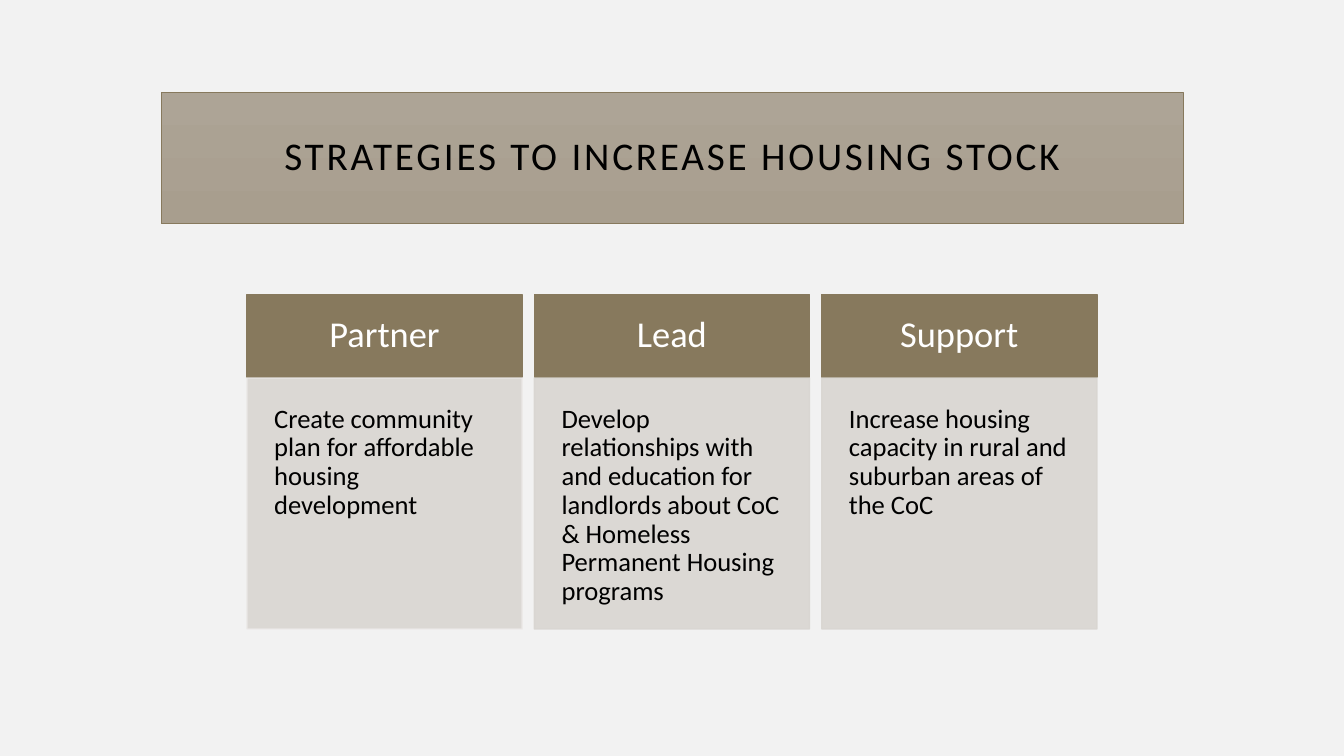
import dataclasses

import pptx
import pptx.dml.color
import pptx.enum.shapes
import pptx.enum.text
import pptx.oxml.ns
import pptx.util
from lxml import etree


@dataclasses.dataclass(frozen=True)
class Theme:
    font: str = "Calibri"
    background: str = "F2F2F2"
    banner_top: str = "ADA496"
    banner_bottom: str = "A89E8E"
    accent: str = "87795D"
    panel: str = "D9D6D1"
    panel_pale: str = "ECEAE8"
    ink: str = "000000"
    white: str = "FFFFFF"
    title_size: int = 28
    heading_size: int = 26
    body_size: int = 19
    line_spacing: float = 0.9
    panel_opacity: int = 90


# Strategy grid, in inches
GRID_LEFT, COLUMN_WIDTH, COLUMN_PITCH = 2.45, 2.73, 2.85
HEADING_ROW = (2.92, 0.82)
DETAIL_ROW = (3.75, 2.49)


def rgb(value):
    return pptx.dml.color.RGBColor.from_string(value)


class StrategySlide:
    def __init__(self, deck, theme):
        self.theme = theme
        self.slide = deck.slides.add_slide(deck.slide_layouts[5])
        backdrop = self.slide.background.fill
        backdrop.solid()
        backdrop.fore_color.rgb = rgb(theme.background)

    def add_words(self, shape, words, size, color, inset, align, anchor):
        frame = shape.text_frame
        frame.word_wrap = True
        frame.auto_size = pptx.enum.text.MSO_AUTO_SIZE.NONE
        frame.vertical_anchor = anchor
        frame.margin_left = frame.margin_right = pptx.util.Inches(inset)
        frame.margin_top = frame.margin_bottom = pptx.util.Inches(inset)
        paragraph = frame.paragraphs[0]
        paragraph.alignment = align
        paragraph.line_spacing = self.theme.line_spacing
        run = paragraph.add_run()
        run.text = words
        run.font.name = self.theme.font
        run.font.size = pptx.util.Pt(size)
        run.font.color.rgb = rgb(color)
        return run

    def title(self, words):
        theme = self.theme
        banner = self.slide.shapes.title
        banner.left, banner.top = pptx.util.Inches(1.6), pptx.util.Inches(0.92)
        banner.width, banner.height = pptx.util.Inches(10.14), pptx.util.Inches(1.3)
        banner.fill.gradient()
        banner.fill.gradient_angle = 270
        for stop, color in zip(banner.fill.gradient_stops,
                               (theme.banner_top, theme.banner_bottom)):
            stop.color.rgb = rgb(color)
        banner.line.color.rgb = rgb(theme.accent)
        banner.line.width = pptx.util.Pt(0.5)
        run = self.add_words(banner, words, theme.title_size, theme.ink, 0.2,
                             pptx.enum.text.PP_ALIGN.CENTER,
                             pptx.enum.text.MSO_ANCHOR.MIDDLE)
        # Letter spacing of 2 pt
        run._r.get_or_add_rPr().set("spc", "200")

    def box(self, column, row, fill, edge, opacity=100):
        top, height = row
        box = self.slide.shapes.add_shape(
            pptx.enum.shapes.MSO_SHAPE.RECTANGLE,
            pptx.util.Inches(GRID_LEFT + column * COLUMN_PITCH),
            pptx.util.Inches(top),
            pptx.util.Inches(COLUMN_WIDTH),
            pptx.util.Inches(height))
        box.shadow.inherit = False
        box.fill.solid()
        box.fill.fore_color.rgb = rgb(fill)
        box.line.color.rgb = rgb(edge)
        box.line.width = pptx.util.Pt(1)
        if opacity < 100:
            for color in box._element.spPr.iter(pptx.oxml.ns.qn("a:srgbClr")):
                alpha = etree.SubElement(color, pptx.oxml.ns.qn("a:alpha"))
                alpha.set("val", str(opacity * 1000))
        return box

    def heading(self, column, words):
        theme = self.theme
        box = self.box(column, HEADING_ROW, theme.accent, theme.accent)
        self.add_words(box, words, theme.heading_size, theme.white, 0.22,
                       pptx.enum.text.PP_ALIGN.CENTER,
                       pptx.enum.text.MSO_ANCHOR.MIDDLE)

    def detail(self, column, words, edge):
        theme = self.theme
        box = self.box(column, DETAIL_ROW, theme.panel, edge, theme.panel_opacity)
        self.add_words(box, words, theme.body_size, theme.ink, 0.27,
                       pptx.enum.text.PP_ALIGN.LEFT,
                       pptx.enum.text.MSO_ANCHOR.TOP)


def main():
    deck = pptx.Presentation()
    deck.slide_width = pptx.util.Inches(13.33)
    deck.slide_height = pptx.util.Inches(7.5)
    theme = Theme()
    page = StrategySlide(deck, theme)

    # Title banner
    page.title("STRATEGIES TO INCREASE HOUSING STOCK")

    # One column per strategy
    strategies = [
        ("Partner", "Create community plan for affordable housing development",
         theme.panel_pale),
        ("Lead", "Develop relationships with and education for landlords about "
         "CoC & Homeless Permanent Housing programs", theme.panel),
        ("Support", "Increase housing capacity in rural and suburban areas of the CoC",
         theme.panel),
    ]
    for column, (role, action, edge) in enumerate(strategies):
        page.heading(column, role)
        page.detail(column, action, edge)

    deck.save("out.pptx")


if __name__ == "__main__":
    main()
